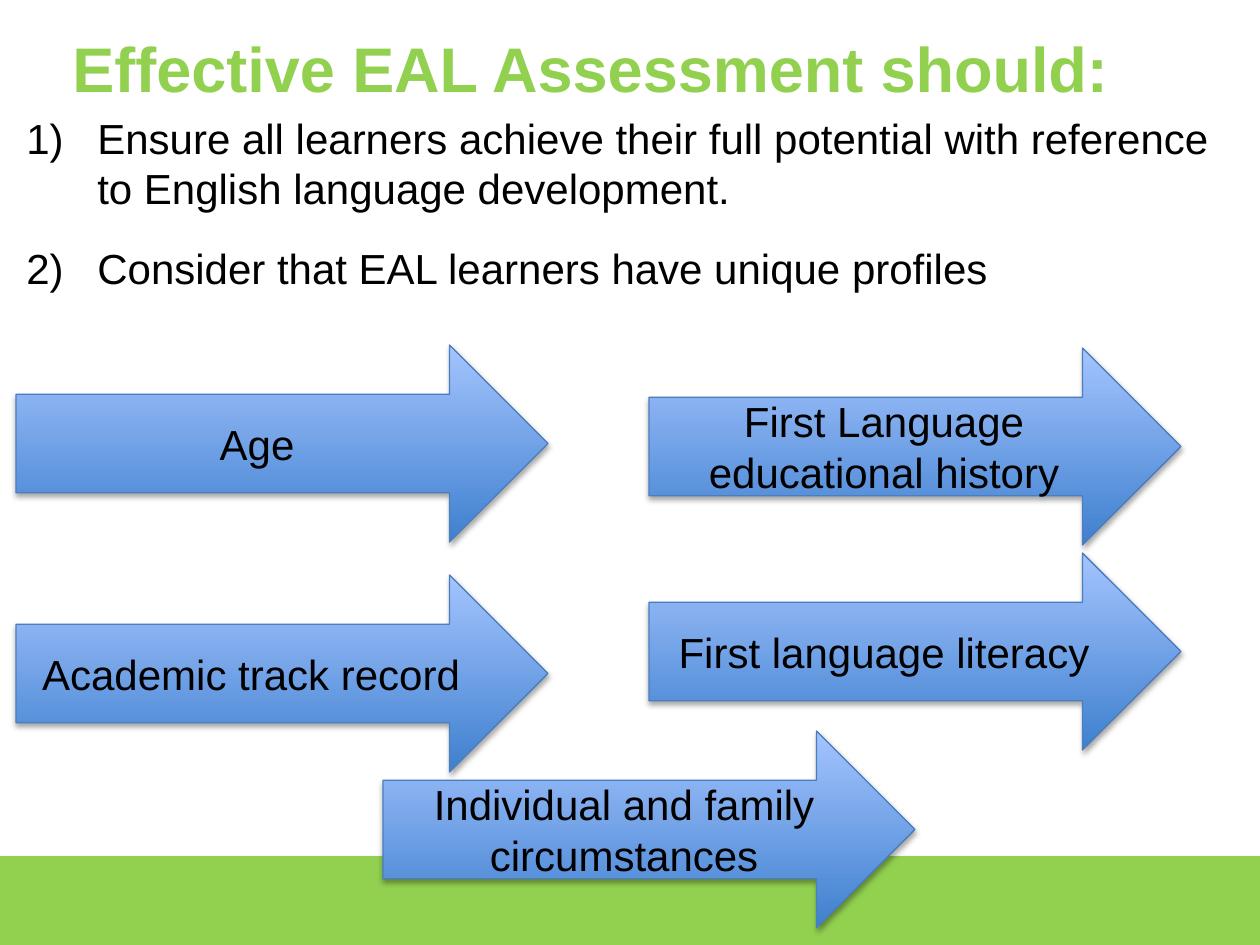
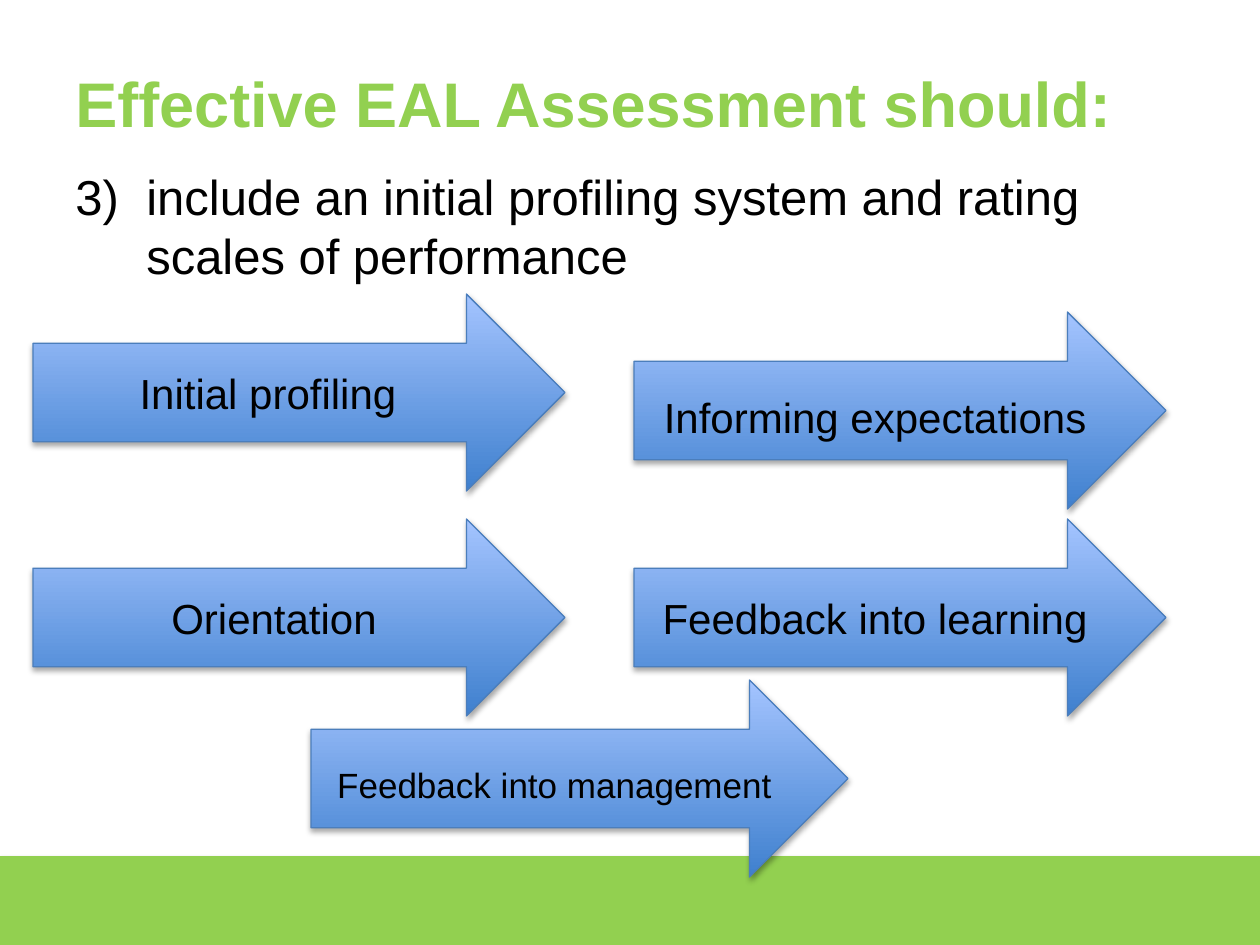
"""Build two slides on effective EAL assessment."""
from lxml.etree import SubElement
from pptx import Presentation
from pptx.dml.color import RGBColor
from pptx.enum.shapes import MSO_SHAPE as Shape
from pptx.enum.text import MSO_ANCHOR as Anchor, PP_ALIGN as Align
from pptx.oxml.ns import qn
from pptx.util import Emu, Pt

GREEN = RGBColor(0x92, 0xD0, 0x50)
BLACK = RGBColor(0x00, 0x00, 0x00)
ARROW_EDGE = RGBColor(0x4B, 0x7E, 0xBC)
ARROW_BOTTOM = RGBColor(0x3F, 0x80, 0xCE)
ARROW_TOP = RGBColor(0xA4, 0xC4, 0xFF)
FONT = "Arial"
TITLE = "Effective EAL Assessment should:"
WIDTH, HEIGHT, BAND_TOP = 1260, 945, 857
ARROW_WIDTH, ARROW_HEIGHT = 532, 197
INSET_X, INSET_Y = 13, 6
HANGING = 71


def px(length):
    return Emu(round(length * 914400 / 126))


class Deck:
    def __init__(self):
        self.presentation = Presentation()
        self.presentation.slide_width = px(WIDTH)
        self.presentation.slide_height = px(HEIGHT)
        self.slide = None

    def start_slide(self, title_box):
        self.slide = self.presentation.slides.add_slide(self.presentation.slide_layouts[6])
        band = self.shape(Shape.RECTANGLE, 0, BAND_TOP, WIDTH, HEIGHT - BAND_TOP, GREEN)
        band.fill.solid()
        band.fill.fore_color.rgb = GREEN
        frame = self.text_box(*title_box)
        frame.vertical_anchor = Anchor.MIDDLE
        self.set_text(frame.paragraphs[0], TITLE, 36, GREEN, bold=True)

    def shape(self, kind, left, top, width, height, edge):
        shape = self.slide.shapes.add_shape(kind, px(left), px(top), px(width), px(height))
        shape.line.color.rgb = edge
        shape.line.width = Pt(0.75)
        shape.shadow.inherit = False
        effects = shape._element.spPr.find(qn("a:effectLst"))
        shadow = SubElement(effects, qn("a:outerShdw"), blurRad="40000", dist="23000",
                            dir="5400000", rotWithShape="0")
        color = SubElement(shadow, qn("a:srgbClr"), val="000000")
        SubElement(color, qn("a:alpha"), val="35000")
        return shape

    def text_box(self, left, top, width, height):
        box = self.slide.shapes.add_textbox(px(left), px(top), px(width), px(height))
        box.text_frame.word_wrap = True
        return box.text_frame

    def set_text(self, paragraph, text, size, color=BLACK, bold=False):
        paragraph.text = text
        font = paragraph.font
        font.name, font.size, font.bold = FONT, Pt(size), bold
        font.color.rgb = color

    def numbered_list(self, box, items, size, start=1):
        frame = self.text_box(*box)
        for index, item in enumerate(items):
            paragraph = frame.add_paragraph() if index else frame.paragraphs[0]
            properties = paragraph._p.get_or_add_pPr()
            properties.set("marL", str(px(HANGING)))
            properties.set("indent", str(-px(HANGING)))
            SubElement(properties, qn("a:buAutoNum"), type="arabicParenR", startAt=str(start))
            if index:
                paragraph.space_before = Pt(17)
            self.set_text(paragraph, item, size)

    def arrow(self, left, top, text, size=24, width=ARROW_WIDTH, extra_right=0, extra_top=0):
        arrow = self.shape(Shape.RIGHT_ARROW, left, top, width, ARROW_HEIGHT, ARROW_EDGE)
        arrow.fill.gradient()
        arrow.fill.gradient_angle = 90
        for stop, color in zip(arrow.fill.gradient_stops, (ARROW_BOTTOM, ARROW_TOP)):
            stop.color.rgb = color
        frame = arrow.text_frame
        frame.word_wrap = True
        frame.vertical_anchor = Anchor.MIDDLE
        frame.margin_right = px(INSET_X + extra_right)
        frame.margin_top = px(INSET_Y + extra_top)
        paragraph = frame.paragraphs[0]
        paragraph.alignment = Align.CENTER
        self.set_text(paragraph, text, size)


def main():
    deck = Deck()

    deck.start_slide((60, 3, 1176, 129))
    deck.numbered_list((14, 106, 1236, 349), (
        "Ensure all learners achieve their full potential with reference "
        "to English language development.",
        "Consider that EAL learners have unique profiles"), 24)
    left, right = 16, 649
    deck.arrow(left, 345, "Age")
    deck.arrow(left, 575, "Academic track record", extra_right=12)
    deck.arrow(383, 731, "Individual and family circumstances")
    deck.arrow(right, 553, "First language literacy", extra_right=12)
    deck.arrow(right, 348, "First Language educational history", extra_right=12)

    deck.start_slide((63, 23, 1134, 158))
    deck.numbered_list((63, 160, 1134, 624), (
        "include an initial profiling system and rating scales of performance",), 28, start=3)
    left, right = 33, 634
    deck.arrow(left, 294, "Initial profiling", extra_right=12)
    deck.arrow(311, 680, "Feedback into management", size=20, width=537, extra_top=12)
    deck.arrow(left, 519, "Orientation")
    deck.arrow(right, 312, "Informing expectations", extra_top=12)
    deck.arrow(right, 519, "Feedback into learning")

    deck.presentation.save("out.pptx")


if __name__ == "__main__":
    main()
